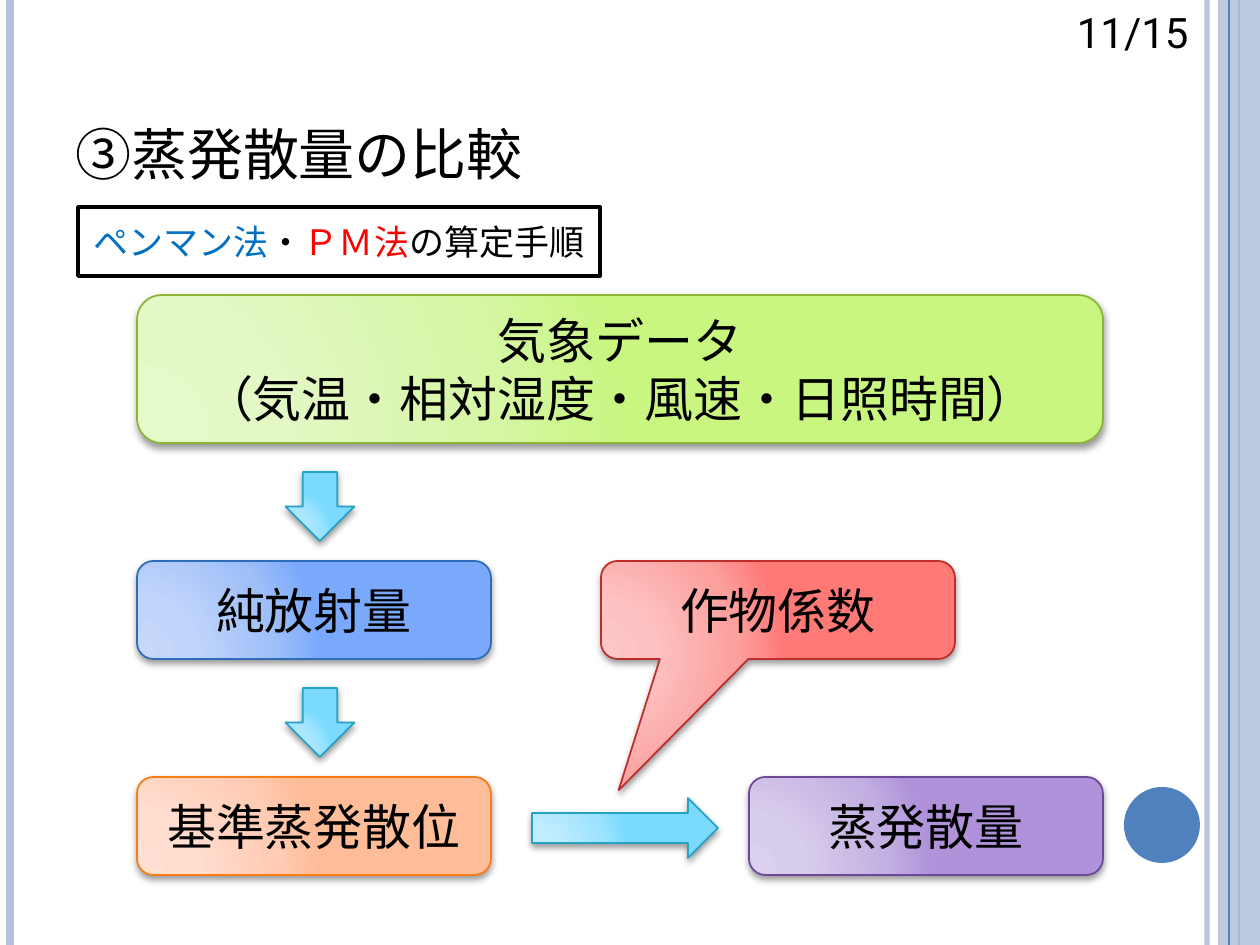
from pptx import Presentation
from pptx.dml.color import RGBColor
from pptx.enum.shapes import MSO_CONNECTOR, MSO_SHAPE as SHAPE
from pptx.enum.text import MSO_ANCHOR as ANCHOR, PP_ALIGN as ALIGN
from pptx.oxml import parse_xml
from pptx.oxml.ns import nsdecls
from pptx.util import Emu, Pt
from lxml.etree import SubElement

FONT = "Roboto"
BLACK, BLUE, PALE = "000000", "4F81BD", "B3C1DB"
W, H = 1260, 945

# Gradient stops from pale to full colour, then the outline
CYAN = ("C4EEFF", "BFECFF", "9DE3FF", "7ADBFF"), "26A2C4"
GREEN = ("E5F9C9", "E3F8C4", "D5F6A3", "C8F680"), "8CB537"
AZURE = ("C7D8FB", "C1D5FA", "9FBFF9", "7AA9FB"), "2C6CB9"
ORANGE = ("FFE0D3", "FFDDCF", "FFCCB5", "FFBC99"), "F97D16"
PURPLE = ("DBD0ED", "D8CCEB", "C3B0E2", "AF92DA"), "6C4898"
RED = ("FCC7C6", "FCC1C0", "FC9F9D", "FF7977"), "BD2D29"


def px(n):
    return Emu(round(n * 914400 / 126))


def rgb(color):
    return RGBColor.from_string(color)


def add_run(p, text, size, color=BLACK):
    r = p.add_run()
    r.text = text
    r.font.name, r.font.size = FONT, Pt(size)
    r.font.color.rgb = rgb(color)
    return r


def set_alpha(color_parent, percent):
    clr = color_parent.find(".//{*}srgbClr")
    SubElement(clr, clr.tag.replace("srgbClr", "alpha"), val=str(percent * 1000))


def add_line(slide, x, color, width, alpha=100):
    ln = slide.shapes.add_connector(MSO_CONNECTOR.STRAIGHT, px(x), 0, px(x), px(H))
    ln.line.color.rgb, ln.line.width = rgb(color), Pt(width)
    if alpha < 100:
        set_alpha(ln.line._ln, alpha)
    ln._element.spPr.append(parse_xml(f"<a:effectLst {nsdecls('a')}/>"))


def add_flat(slide, kind, box, fill, line=None, width=1):
    sp = slide.shapes.add_shape(kind, *map(px, box))
    sp.shadow.inherit = False
    sp.fill.solid()
    sp.fill.fore_color.rgb = rgb(fill)
    if line:
        sp.line.color.rgb, sp.line.width = rgb(line), Pt(width)
    else:
        sp.line.fill.background()
    return sp


def add_glossy(slide, kind, box, style, lines=()):
    """Shape with a radial gradient, a soft shadow and centred text."""
    colors, outline = style
    sp = add_flat(slide, kind, box, colors[-1], outline)
    stops = "".join(f'<a:gs pos="{pos}000"><a:srgbClr val="{c}"/></a:gs>'
                    for pos, c in zip((0, 30, 75, 100), colors))
    grad = parse_xml(
        f'<a:gradFill {nsdecls("a")} rotWithShape="1"><a:gsLst>{stops}</a:gsLst>'
        '<a:path path="circle"><a:fillToRect l="5000" t="100000" r="120000" b="10000"/>'
        '</a:path></a:gradFill>')
    spPr = sp._element.spPr
    spPr.replace(spPr.find("{*}solidFill"), grad)
    spPr.find("{*}effectLst").append(parse_xml(
        f'<a:outerShdw {nsdecls("a")} blurRad="{Pt(4)}" dist="{Pt(2)}" dir="5400000" '
        'rotWithShape="0"><a:srgbClr val="000000"><a:alpha val="40000"/></a:srgbClr>'
        '</a:outerShdw>'))
    tf = sp.text_frame
    tf.vertical_anchor = ANCHOR.MIDDLE
    for i, text in enumerate(lines):
        p = tf.add_paragraph() if i else tf.paragraphs[0]
        p.alignment = ALIGN.CENTER
        add_run(p, text, 28)
    return sp


def add_frame(slide):
    """Vertical rules, right band and disc."""
    add_line(slide, 1207, PALE, 3, 93)
    add_line(slide, 10, PALE, 4.5)
    add_line(slide, 1239, BLUE, 1.5)
    band = add_flat(slide, SHAPE.RECTANGLE, (1218, 0, W - 1218, H), PALE)
    set_alpha(band._element.spPr, 87)
    add_line(slide, 1229, BLUE, 0.75)
    add_flat(slide, SHAPE.OVAL, (1124, 787, 76, 76), BLUE)


def add_heading(slide, x, y):
    # Title
    title = slide.shapes.title
    title.left, title.top, title.width, title.height = map(px, (x, y, 1099, 158))
    tf = title.text_frame
    tf.vertical_anchor = ANCHOR.BOTTOM
    p = tf.paragraphs[0]
    p.alignment = ALIGN.LEFT
    r = add_run(p, "③蒸発散量の比較", 40)
    r.font._element.set("cap", "small")

    # Page number
    tf = slide.shapes.add_textbox(*map(px, (x + 980, 0, 158, 63))).text_frame
    tf.word_wrap = True
    tf.paragraphs[0].alignment = ALIGN.RIGHT
    add_run(tf.paragraphs[0], "11/15", 24)

    # Framed subtitle
    label = add_flat(slide, SHAPE.RECTANGLE, (x + 15, y + 169, 522, 69),
                     "FFFFFF", BLACK, 2)
    label.text_frame.vertical_anchor = ANCHOR.MIDDLE
    p = label.text_frame.paragraphs[0]
    p.alignment = ALIGN.CENTER
    for text, color in (("ペンマン法", "0070C0"), ("・", BLACK),
                        ("ＰＭ法", "FF0000"), ("の算定手順", BLACK)):
        add_run(p, text, 20, color)


def add_flow(slide, x, y, w):
    box_w, box_h, arrow = 354, 98, 69
    row1, row2 = y + 266, y + 482

    # Arrows
    for top in (row1, row2):
        add_glossy(slide, SHAPE.DOWN_ARROW,
                   (x + (box_w - arrow) / 2 + 6, top - 89, arrow, arrow), CYAN)
    right = add_glossy(slide, SHAPE.DOWN_ARROW, (x + 458, row2 - 42, 60, 186), CYAN)
    right.rotation = 270

    # Steps
    for box, style, lines in (
        ((x, y, w, 148), GREEN, ("気象データ", "（気温・相対湿度・風速・日照時間）")),
        ((x, row1, box_w, box_h), AZURE, ("純放射量",)),
        ((x, row2, box_w, box_h), ORANGE, ("基準蒸発散位",)),
        ((x + w - box_w, row2, box_w, box_h), PURPLE, ("蒸発散量",)),
    ):
        add_glossy(slide, SHAPE.ROUNDED_RECTANGLE, box, style, lines)

    # Callout pointing at the horizontal arrow
    note = add_glossy(slide, SHAPE.ROUNDED_RECTANGULAR_CALLOUT,
                      (x + 464, row1, box_w, box_h), RED, ("作物係数",))
    for i, value in enumerate((-0.45, 1.84, 0.17)):
        note.adjustments[i] = value


def main():
    prs = Presentation()
    prs.slide_width, prs.slide_height = px(W), px(H)
    slide = prs.slides.add_slide(prs.slide_layouts[5])
    add_frame(slide)
    add_heading(slide, 63, 38)
    add_flow(slide, 137, 295, 966)
    prs.save("out.pptx")


if __name__ == "__main__":
    main()
